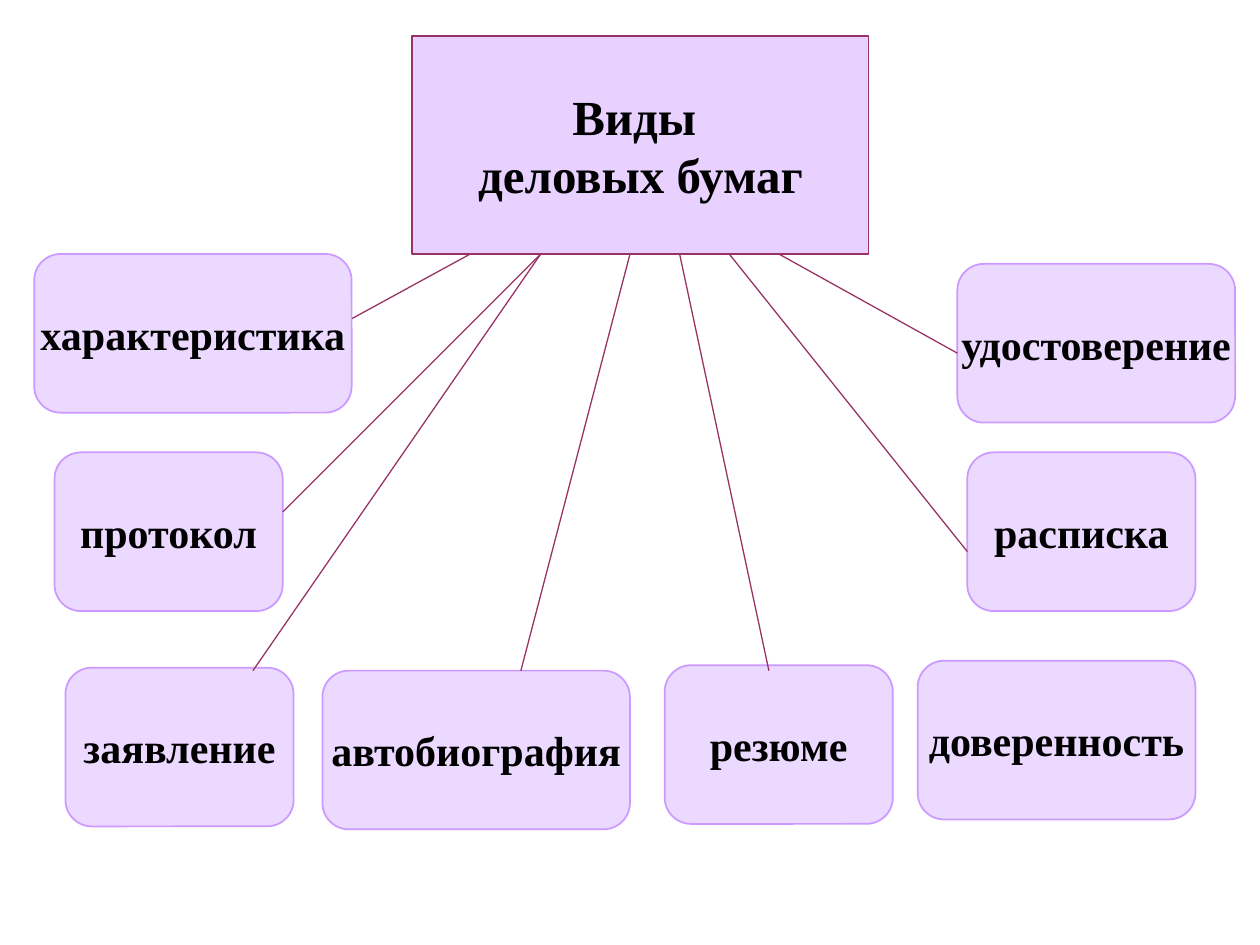
from lxml.etree import SubElement
from pptx import Presentation
from pptx.dml.color import RGBColor
from pptx.enum.shapes import MSO_CONNECTOR, MSO_SHAPE
from pptx.enum.text import MSO_ANCHOR, MSO_AUTO_SIZE, PP_ALIGN
from pptx.oxml import parse_xml
from pptx.oxml.ns import nsdecls, qn
from pptx.util import Cm, Pt

LILAC = RGBColor(0xCC, 0x99, 0xFF)
PLUM = RGBColor(0x99, 0x33, 0x66)
BLACK = RGBColor(0x00, 0x00, 0x00)

TITLE_BOX = (8.31, 0.72, 9.2, 4.4)
TITLE_BOTTOM = TITLE_BOX[1] + TITLE_BOX[3]
NODE_HEIGHT = 3.2
NODES = [
    ("характеристика", 0.69, 5.12, 6.4),
    ("протокол", 1.1, 9.12, 4.6),
    ("заявление", 1.32, 13.46, 4.6),
    ("расписка", 19.5, 9.12, 4.6),
    ("доверенность", 18.5, 13.32, 5.6),
    ("резюме", 13.4, 13.41, 4.6),
    ("автобиография", 6.5, 13.52, 6.2),
    ("удостоверение", 19.3, 5.32, 5.6),
]
RAYS = [
    (15.7, 19.3, 7.12),
    (14.7, 19.5, 11.12),
    (13.7, 15.5, 13.52),
    (9.48, 7.1, 6.42),
    (10.9, 5.7, 10.32),
    (10.9, 5.1, 13.52),
    (12.7, 10.5, 13.52),
]


class Diagram:
    """Hold the style and current slide of a box-and-ray diagram."""

    font = {"name": "Times New Roman", "bold": True}
    frame = {
        "word_wrap": False,
        "auto_size": MSO_AUTO_SIZE.NONE,
        "vertical_anchor": MSO_ANCHOR.MIDDLE,
    }

    def __init__(self, prs):
        self.s = prs.slides.add_slide(prs.slide_layouts[5])

    def format_box(self, sp, lines, size, line_color, opacity):
        sp.fill.solid()
        sp.fill.fore_color.rgb = LILAC
        color = sp._element.spPr.find(qn("a:solidFill")).find(qn("a:srgbClr"))
        SubElement(color, qn("a:alpha"), val=str(opacity * 1000))
        sp.line.color.rgb = line_color
        sp.line.width = Pt(1)
        tf = sp.text_frame
        tf.text = "\n".join(lines)
        for name, value in self.frame.items():
            setattr(tf, name, value)
        for p in tf.paragraphs:
            p.alignment = PP_ALIGN.CENTER
            for r in p.runs:
                for name, value in {**self.font, "size": Pt(size)}.items():
                    setattr(r.font, name, value)
                r.font.color.rgb = BLACK

    def title(self, lines, box):
        sp = self.s.shapes.title
        for name, value in zip(("left", "top", "width", "height"), box):
            setattr(sp, name, Cm(value))
        sp._element.spPr.append(parse_xml(
            f'<a:prstGeom {nsdecls("a")} prst="roundRect"><a:avLst/></a:prstGeom>'
        ))
        self.format_box(sp, lines, 28, PLUM, 45)

    def node(self, text, left, top, width):
        sp = self.s.shapes.add_shape(
            MSO_SHAPE.ROUNDED_RECTANGLE,
            Cm(left), Cm(top), Cm(width), Cm(NODE_HEIGHT),
        )
        sp.shadow.inherit = False
        self.format_box(sp, [text], 24, LILAC, 37)

    def ray(self, start_x, end_x, end_y):
        cxn = self.s.shapes.add_connector(
            MSO_CONNECTOR.STRAIGHT,
            Cm(start_x), Cm(TITLE_BOTTOM), Cm(end_x), Cm(end_y),
        )
        cxn.line.color.rgb = PLUM
        cxn.line.width = Pt(0.75)
        SubElement(cxn._element.spPr, qn("a:effectLst"))


def main():
    prs = Presentation()
    prs.slide_width, prs.slide_height = Cm(25.4), Cm(19.05)
    diagram = Diagram(prs)
    diagram.title(["Виды ", "деловых бумаг"], TITLE_BOX)
    for node in NODES:
        diagram.node(*node)
    for ray in RAYS:
        diagram.ray(*ray)
    prs.save("out.pptx")


if __name__ == "__main__":
    main()
